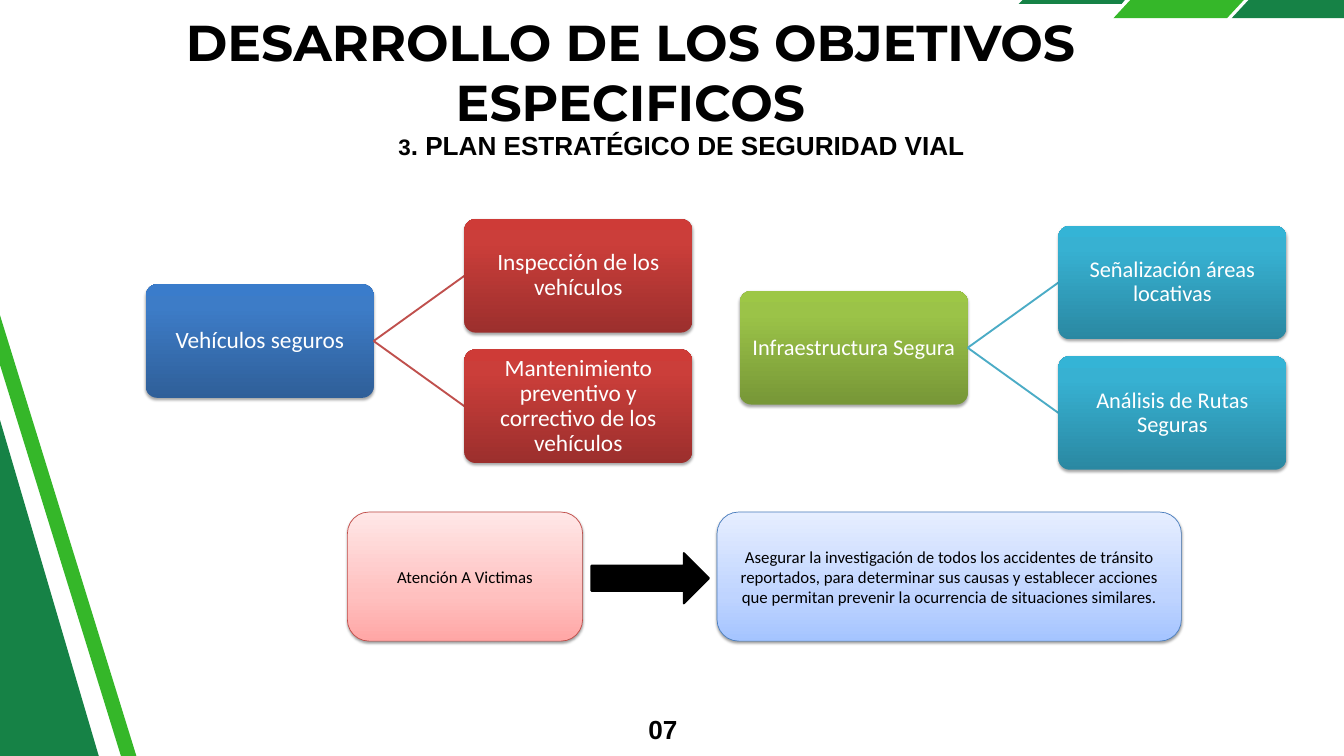
from copy import deepcopy

from lxml.etree import SubElement
from pptx import Presentation
from pptx.dml.color import RGBColor
from pptx.enum.shapes import MSO_CONNECTOR, MSO_SHAPE
from pptx.enum.text import MSO_ANCHOR, PP_ALIGN
from pptx.oxml.ns import qn
from pptx.util import Inches, Pt

GREEN, LIME = "168246", "35B729"
BLUE = [(0, "2F5F99"), (0.8, "3D7CC7"), (1, "3A7CCB")]
RED = [(0, "9C2F2D"), (0.8, "CB3E3A"), (1, "CE3B37")]
OLIVE = [(0, "779737"), (0.8, "9BC348"), (1, "9DC746")]
TEAL = [(0, "2A88A2"), (0.8, "37B1D2"), (1, "34B4D6")]
PINK = [(0, "FFA6A5"), (0.35, "FFC0BF"), (1, "FFE7E7")]
SKY = [(0, "A4C4FF"), (0.35, "BFD4FF"), (1, "E6EEFF")]

BANDS = [
    (GREEN, [(15.22, 0), (16.74, 0), (16.69, 0.06), (15.16, 0.06)]),
    (LIME, [(16.82, 0), (18.51, 0), (18.26, 0.27), (16.57, 0.27)]),
    (GREEN, [(18.58, 0), (20, 0), (20, 0.27), (18.33, 0.27)]),
    (GREEN, [(0, 6.25), (1.47, 11.25), (0, 11.25)]),
    (LIME, [(0, 4.69), (2.03, 11.25), (1.8, 11.25), (0, 5.43)]),
]
NODE_W, NODE_H = 3.39, 1.69
CHILD_DX, CHILD_DY = 4.74, 0.97


def rgb(value):
    return RGBColor.from_string(value)


class Deck:
    """Holds the style and the current slide, and draws each kind of element."""

    heading, label, body = "Montserrat", "Arial", "Calibri"

    def __init__(self):
        self.prs = Presentation()
        self.prs.slide_width, self.prs.slide_height = Inches(20), Inches(11.25)
        self.s = self.prs.slides.add_slide(self.prs.slide_layouts[5])

    def add_runs(self, tf, runs, font, color="000000", bold=False,
                 align=PP_ALIGN.CENTER, anchor=MSO_ANCHOR.MIDDLE, inset=(0.1, 0.05), spacing=1.0):
        tf.word_wrap = True
        tf.vertical_anchor = anchor
        tf.margin_left = tf.margin_right = Inches(inset[0])
        tf.margin_top = tf.margin_bottom = Inches(inset[1])
        p = tf.paragraphs[0]
        p.alignment, p.line_spacing = align, spacing
        for text, size in runs:
            r = p.add_run()
            r.text = text
            r.font.name, r.font.size, r.font.bold = font, Pt(size), bold
            r.font.color.rgb = rgb(color)

    def title(self, box, text, size):
        sp = self.s.shapes.title
        sp.left, sp.top, sp.width, sp.height = map(Inches, box)
        self.add_runs(sp.text_frame, [(text, size)], self.heading, bold=True,
                      anchor=MSO_ANCHOR.TOP, inset=(0, 0))

    def text(self, box, runs, **style):
        sp = self.s.shapes.add_textbox(*map(Inches, box))
        self.add_runs(sp.text_frame, runs, self.label, bold=True, anchor=MSO_ANCHOR.TOP, **style)

    def band(self, color, points):
        start, *rest = [(Inches(x), Inches(y)) for x, y in points]
        builder = self.s.shapes.build_freeform(*start)
        builder.add_line_segments(rest)
        sp = builder.convert_to_shape()
        sp.shadow.inherit = False
        sp.fill.solid()
        sp.fill.fore_color.rgb = rgb(color)
        sp.line.fill.background()

    def gradient(self, sp, stops):
        sp.fill.gradient()
        sp.fill.gradient_angle = 90
        gs_list = next(sp._element.iter(qn("a:gsLst")))
        gs_list.append(deepcopy(gs_list[0]))
        for stop, (position, color) in zip(sp.fill.gradient_stops, stops):
            stop.position = position
            stop.color.rgb = rgb(color)

    def drop_shadow(self, sp, distance, opacity):
        sp.shadow.inherit = False
        effects = sp._element.spPr.find(qn("a:effectLst"))
        outer = SubElement(effects, qn("a:outerShdw"), blurRad=str(Pt(3.1)),
                           dist=str(Pt(distance)), dir="5400000", rotWithShape="0")
        color = SubElement(outer, qn("a:srgbClr"), val="000000")
        SubElement(color, qn("a:alpha"), val=str(opacity * 1000))

    def card(self, box, text, stops, line):
        sp = self.s.shapes.add_shape(MSO_SHAPE.ROUNDED_RECTANGLE, *map(Inches, box))
        self.gradient(sp, stops)
        sp.line.color.rgb, sp.line.width = rgb(line), Pt(0.75)
        self.drop_shadow(sp, 1.6, 38)
        self.add_runs(sp.text_frame, [(text, 18)], self.body)

    def node(self, left, top, text, size, stops):
        sp = self.s.shapes.add_shape(MSO_SHAPE.ROUNDED_RECTANGLE, Inches(left), Inches(top),
                                     Inches(NODE_W), Inches(NODE_H))
        sp.adjustments[0] = 0.1
        self.gradient(sp, stops)
        sp.line.fill.background()
        self.drop_shadow(sp, 1.8, 35)
        self.add_runs(sp.text_frame, [(text, size)], self.body, "FFFFFF",
                      inset=(0.05, 0.05), spacing=0.9)

    def link(self, x1, y1, x2, y2, color):
        c = self.s.shapes.add_connector(MSO_CONNECTOR.STRAIGHT, *map(Inches, (x1, y1, x2, y2)))
        c.line.color.rgb, c.line.width = rgb(color), Pt(2)
        SubElement(c._element.spPr, qn("a:effectLst"))

    def tree(self, left, top, size, root, root_stops, children, child_stops, line):
        self.node(left, top, root, size, root_stops)
        middle = top + NODE_H / 2
        for text, dy in zip(children, (-CHILD_DY, CHILD_DY)):
            self.link(left + NODE_W, middle, left + CHILD_DX, middle + dy, line)
            self.node(left + CHILD_DX, top + dy, text, size, child_stops)

    def arrow(self, box, color):
        sp = self.s.shapes.add_shape(MSO_SHAPE.RIGHT_ARROW, *map(Inches, box))
        sp.shadow.inherit = False
        sp.fill.solid()
        sp.fill.fore_color.rgb = sp.line.color.rgb = rgb(color)
        sp.line.width = Pt(2)


def main():
    deck = Deck()
    for color, points in BANDS:
        deck.band(color, points)
    deck.title((2.42, 0.16, 13.92, 1.82), "DESARROLLO DE LOS OBJETIVOS ESPECIFICOS", 54)
    deck.text((9.52, 10.54, 0.56, 0.5), [("07", 28)], align=PP_ALIGN.RIGHT,
              inset=(0, 0), spacing=Pt(39.2))
    deck.text((5.83, 1.88, 8.71, 0.57),
              [("3", 24), (". PLAN ESTRATÉGICO DE SEGURIDAD VIAL", 28)], align=PP_ALIGN.LEFT)
    deck.tree(2.17, 4.23, 25, "Vehículos seguros", BLUE,
              ["Inspección de los vehículos",
               "Mantenimiento preventivo y correctivo de los vehículos"], RED, "C0504D")
    deck.tree(11.01, 4.33, 24, "Infraestructura Segura", OLIVE,
              ["Señalización áreas locativas", "Análisis de Rutas Seguras"], TEAL, "4BACC6")
    deck.card((5.17, 7.62, 3.5, 1.92), "Atención A Victimas", PINK, "BF4C48")
    deck.card((10.67, 7.62, 6.91, 1.92),
              "Asegurar la investigación de todos los accidentes de tránsito reportados, "
              "para determinar sus causas y establecer acciones que permitan prevenir "
              "la ocurrencia de situaciones similares.", SKY, "4B7EBC")
    deck.arrow((8.8, 8.23, 1.75, 0.75), "000000")
    deck.prs.save("out.pptx")


if __name__ == "__main__":
    main()
